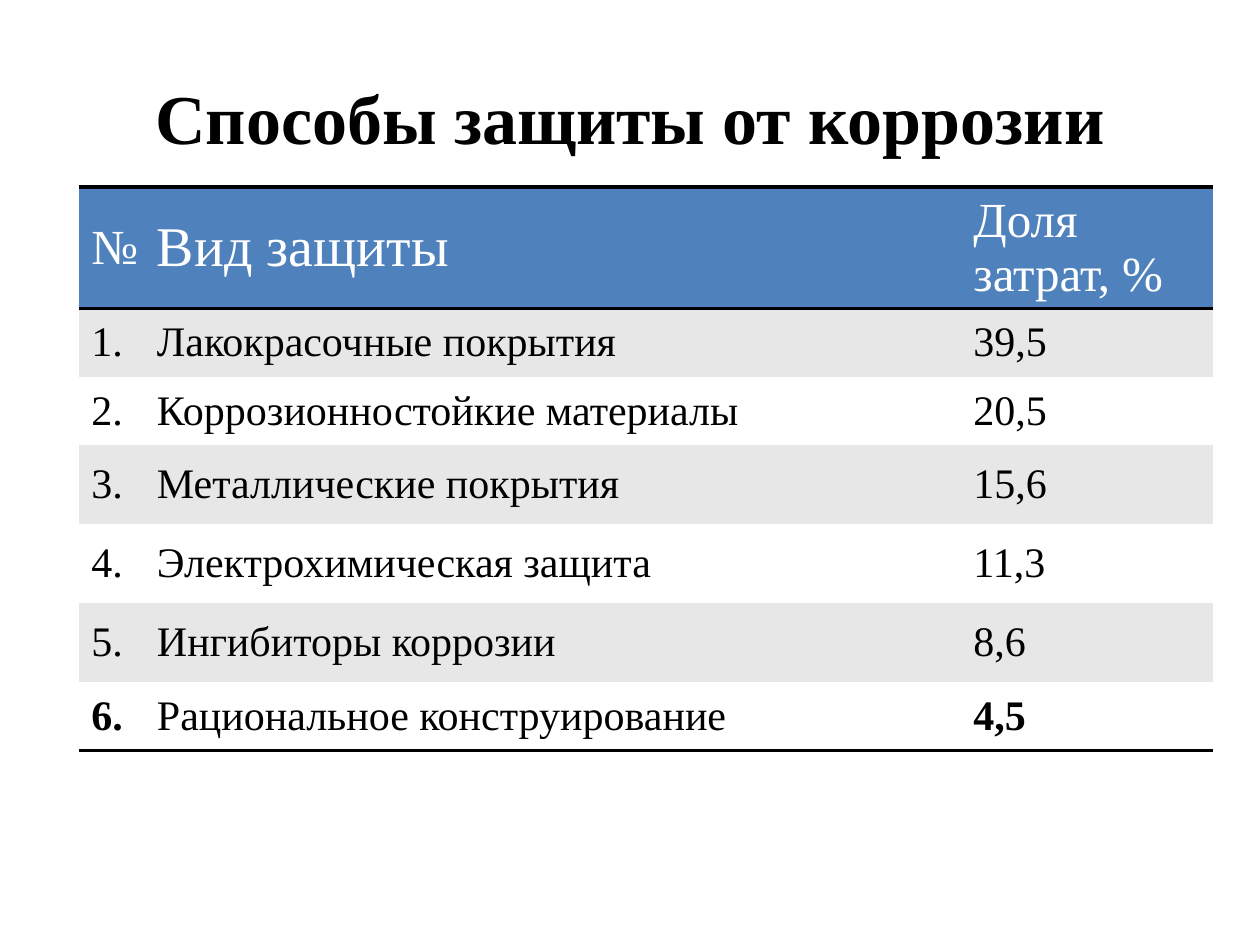
from lxml import etree
from pptx import Presentation
from pptx import util as u
from pptx.dml.color import RGBColor
from pptx.enum import text
from pptx.oxml.ns import qn

FONT = "Times New Roman"
BLACK, WHITE, BLUE, GREY = "000000", "FFFFFF", "4F81BD", "E7E7E7"
TITLE = "Способы защиты от коррозии"
HEADER = ("№", "Вид защиты", "Доля затрат, %")
HEADER_SIZES = (28, 32, 28)
METHODS = [
    ("Лакокрасочные покрытия", "39,5"),
    ("Коррозионностойкие материалы", "20,5"),
    ("Металлические покрытия", "15,6"),
    ("Электрохимическая защита", "11,3"),
    ("Ингибиторы коррозии", "8,6"),
    ("Рациональное конструирование", "4,5"),
]
COLUMN_WIDTHS = (1.32, 16.46, 5.08)
ROW_HEIGHTS = (2.45, 1.38, 1.38, 1.59, 1.59, 1.59, 1.38)
NO_STYLE = "{2D5ABB26-0587-4C30-8999-92F81FD0307C}"


def color(value):
    """Return the colour for a hex string."""
    return RGBColor.from_string(value)


def format_text(frame, size, ink, align, bold=False):
    """Align the paragraphs of a frame and style their runs."""
    for para in frame.paragraphs:
        para.alignment = align
        for span in para.runs:
            font = span.font
            font.name, font.size, font.bold = FONT, u.Pt(size), bold
            font.color.rgb = color(ink)


def add_border(cell, side, width):
    """Draw a black border on one side of a cell."""
    line = etree.SubElement(cell._tc.get_or_add_tcPr(), qn(f"a:ln{side}"), w=str(u.Pt(width)))
    fill = etree.SubElement(line, qn("a:solidFill"))
    etree.SubElement(fill, qn("a:srgbClr"), val=BLACK)


def fill_cell(cell, words, fill, size, ink, bold=False):
    """Write and colour one table cell."""
    cell.text = words
    cell.vertical_anchor = text.MSO_ANCHOR.MIDDLE
    format_text(cell.text_frame, size, ink, text.PP_ALIGN.JUSTIFY, bold)
    cell.fill.solid()
    cell.fill.fore_color.rgb = color(fill)


def add_title(slide):
    """Place and format the slide title."""
    title = slide.shapes.title
    title.left, title.top, title.width, title.height = map(u.Cm, (1.27, 0.76, 22.86, 3.18))
    title.text_frame.text = TITLE
    title.text_frame.vertical_anchor = text.MSO_ANCHOR.MIDDLE
    format_text(title.text_frame, 40, BLACK, text.PP_ALIGN.CENTER, True)


def add_methods_table(slide):
    """Build the table of protection methods and their cost shares."""
    rows = [HEADER] + [(f"{number}.", *method) for number, method in enumerate(METHODS, 1)]
    last = len(rows) - 1
    frame = slide.shapes.add_table(
        len(rows), len(HEADER), u.Cm(1.59), u.Cm(3.77),
        u.Cm(sum(COLUMN_WIDTHS)), u.Cm(sum(ROW_HEIGHTS)))
    table = frame.table
    table.first_row = table.horz_banding = False
    table._tbl.tblPr.find(qn("a:tableStyleId")).text = NO_STYLE
    for column, width in zip(table.columns, COLUMN_WIDTHS):
        column.width = u.Cm(width)
    for r, (row, height, words) in enumerate(zip(table.rows, ROW_HEIGHTS, rows)):
        row.height = u.Cm(height)
        for c, cell in enumerate(row.cells):
            if r == 0:
                add_border(cell, "T", 2)
            if r in (0, last):
                add_border(cell, "B", 2)
            if r == 0:
                fill_cell(cell, words[c], BLUE, HEADER_SIZES[c], WHITE)
            else:
                fill_cell(cell, words[c], GREY if r % 2 else WHITE, 24, BLACK,
                          r == last and c != 1)


def main():
    """Build the slide and save the deck."""
    deck = Presentation()
    deck.slide_width, deck.slide_height = u.Cm(25.4), u.Cm(19.05)
    slide = deck.slides.add_slide(deck.slide_layouts[5])
    add_title(slide)
    add_methods_table(slide)
    deck.save("out.pptx")


if __name__ == "__main__":
    main()
